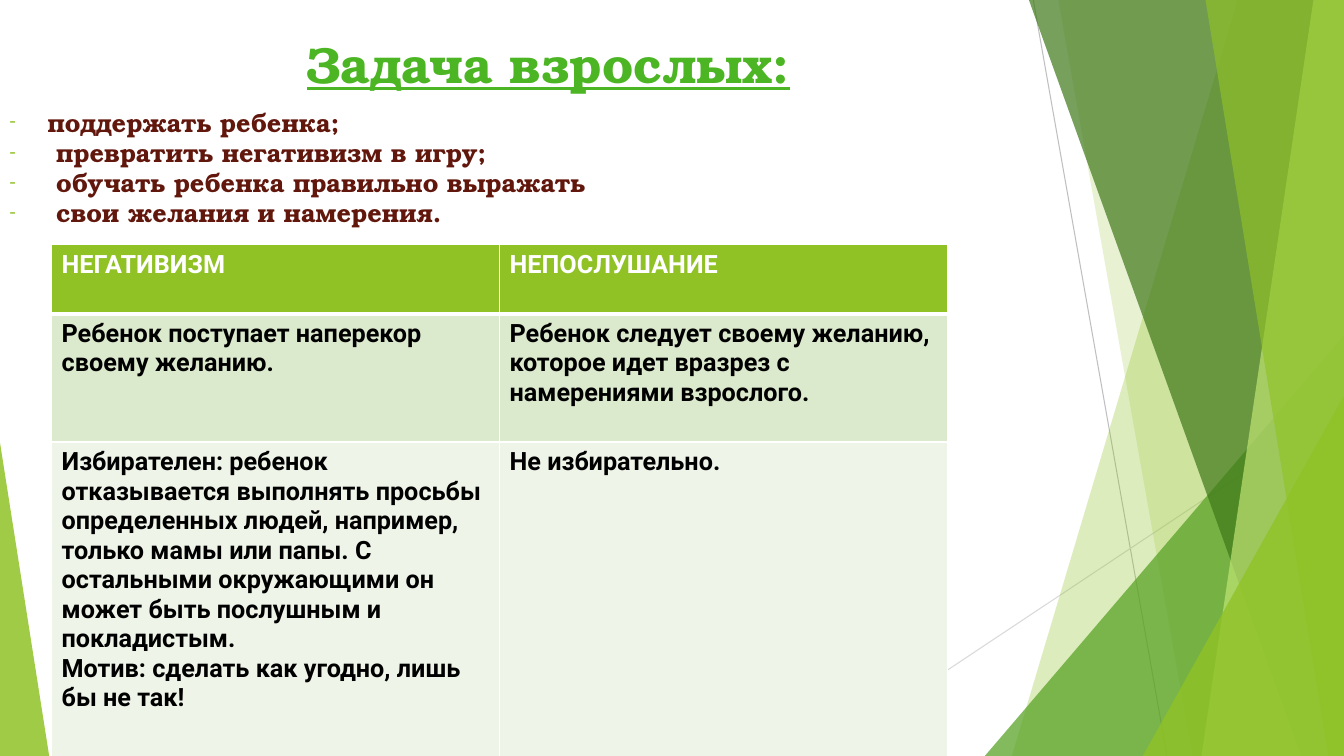
from lxml.etree import SubElement
from pptx import Presentation
from pptx.dml.color import RGBColor
from pptx.enum.shapes import MSO_CONNECTOR as Connector, MSO_SHAPE as Shape
from pptx.enum.text import MSO_ANCHOR as Anchor, PP_ALIGN as Align
from pptx.oxml.ns import qn
from pptx.util import Cm, Pt

# Content
TITLE = "Задача взрослых:"
TASKS = [
    "поддержать ребенка;",
    " превратить негативизм в игру;",
    " обучать ребенка правильно выражать",
    " свои желания и намерения.",
]
ROWS = [
    ("НЕГАТИВИЗМ", "НЕПОСЛУШАНИЕ"),
    ("Ребенок поступает наперекор своему желанию.",
     "Ребенок следует своему желанию, которое идет вразрез с намерениями взрослого."),
    ("Избирателен: ребенок отказывается выполнять просьбы определенных людей, "
     "например, только мамы или папы. С остальными окружающими он может быть "
     "послушным и покладистым.\nМотив: сделать как угодно, лишь бы не так!",
     "Не избирательно."),
]

# Style and sizes in centimetres
COLORS = {
    "lime": "90C226", "green": "54A021", "forest": "3F7819", "pale": "C0E474",
    "title": "4CB523", "task": "62170D", "white": "FFFFFF", "black": "000000",
    "band_1": "DBE9CD", "band_2": "EEF4E8", "line_1": "BFBFBF", "line_2": "D9D9D9",
}
SERIF, SANS = "TeX Gyre Bonum", "Roboto"
WIDTH, HEIGHT = 33.87, 19.05
ROW_HEIGHTS = [1.74, 3.23, 8.75]
ROW_STYLES = [("lime", "white"), ("band_1", "black"), ("band_2", "black")]
COLUMN_WIDTH = 11.29

# Thin lines: start x, start y, end x, end y, colour
LINES = [(26.04, 0, 29.41, HEIGHT, "line_1"), (WIDTH, 10.24, 20.62, HEIGHT, "line_2")]
# Ribbons reach the right edge: top x, bottom x
# Triangles stand on the bottom edge: left, top, width, apex
FACETS = [
    ("ribbon", (31.19, 25.5), "lime", 30),
    ("ribbon", (26.67, 30.05), "lime", 20),
    ("triangle", (24.82, 8.46, 9.05, 1), "green", 72),
    ("ribbon", (25.93, 32.79), "forest", 70),
    ("ribbon", (33.1, 30.28), "pale", 70),
    ("ribbon", (30.38, 33.48), "lime", 65),
    ("triangle", (28.8, 9.98, 5.07, 1), "lime", 80),
    ("triangle", (0, 11.15, 1.24, 0), "lime", 85),
]


def rgb(name):
    return RGBColor.from_string(COLORS[name])


def set_font(paragraph, face, size, color):
    font = paragraph.font
    font.name, font.size, font.bold = face, Pt(size), True
    font.color.rgb = rgb(color)


def add_ribbon(shapes, top_x, bottom_x):
    builder = shapes.build_freeform(Cm(top_x), 0)
    corners = [(WIDTH, 0), (WIDTH, HEIGHT), (bottom_x, HEIGHT)]
    builder.add_line_segments([(Cm(x), Cm(y)) for x, y in corners], close=True)
    return builder.convert_to_shape()


def add_triangle(shapes, left, top, width, apex):
    shape = shapes.add_shape(Shape.ISOSCELES_TRIANGLE, Cm(left), Cm(top),
                             Cm(width), Cm(HEIGHT - top))
    shape.adjustments[0] = apex
    return shape


def add_text(shapes, left, top, width, height, lines, size, color):
    frame = shapes.add_textbox(Cm(left), Cm(top), Cm(width), Cm(height)).text_frame
    frame.word_wrap = True
    frame.vertical_anchor = Anchor.TOP
    frame.text = "\n".join(lines)
    for paragraph in frame.paragraphs:
        set_font(paragraph, SERIF, size, color)
    return frame.paragraphs


def add_dash(paragraph):
    properties = paragraph._p.get_or_add_pPr()
    properties.set("marL", str(Cm(0.95)))
    properties.set("indent", str(-Cm(0.95)))
    color = SubElement(properties, qn("a:buClr"))
    SubElement(color, qn("a:srgbClr"), val=COLORS["lime"])
    SubElement(properties, qn("a:buSzPct"), val="80000")
    SubElement(properties, qn("a:buFont"), typeface=SANS)
    SubElement(properties, qn("a:buChar"), char="-")


def add_border(cell, side, points):
    line = SubElement(cell._tc.get_or_add_tcPr(), qn("a:ln" + side), w=str(Pt(points)))
    fill = SubElement(line, qn("a:solidFill"))
    SubElement(fill, qn("a:srgbClr"), val=COLORS["white"])


presentation = Presentation()
presentation.slide_width, presentation.slide_height = Cm(WIDTH), Cm(HEIGHT)
slide = presentation.slides.add_slide(presentation.slide_layouts[6])
shapes = slide.shapes

# Background lines and translucent facets
for x1, y1, x2, y2, color in LINES:
    line = shapes.add_connector(Connector.STRAIGHT, Cm(x1), Cm(y1), Cm(x2), Cm(y2))
    line.line.color.rgb = rgb(color)
    line.line.width = Pt(0.75)
    SubElement(line._element.spPr, qn("a:effectLst"))

makers = {"ribbon": add_ribbon, "triangle": add_triangle}
for kind, geometry, color, opacity in FACETS:
    shape = makers[kind](shapes, *geometry)
    shape.shadow.inherit = False
    shape.line.fill.background()
    shape.fill.solid()
    shape.fill.fore_color.rgb = rgb(color)
    fill_color = shape._element.spPr.find(qn("a:solidFill"))[0]
    SubElement(fill_color, qn("a:alpha"), val=str(opacity * 1000))

# Title and task list
heading = add_text(shapes, 1.88, 0.71, 23.88, 3.66, [TITLE], 36, "title")[0]
heading.alignment = Align.CENTER
heading.font.underline = True
for paragraph in add_text(shapes, 0, 2.57, 23.88, 3.61, TASKS, 18, "task"):
    add_dash(paragraph)

# Comparison table
table = shapes.add_table(len(ROWS), 2, Cm(1.3), Cm(6.17), Cm(2 * COLUMN_WIDTH),
                         Cm(sum(ROW_HEIGHTS))).table
for column in table.columns:
    column.width = Cm(COLUMN_WIDTH)
for index, (texts, (fill, ink)) in enumerate(zip(ROWS, ROW_STYLES)):
    table.rows[index].height = Cm(ROW_HEIGHTS[index])
    for cell, text in zip(table.rows[index].cells, texts):
        cell.text = text
        for paragraph in cell.text_frame.paragraphs:
            set_font(paragraph, SANS, 18, ink)
        for side in "LRTB":
            header_edge = (index, side) in [(0, "B"), (1, "T")]
            add_border(cell, side, 3 if header_edge else 1)
        cell.fill.solid()
        cell.fill.fore_color.rgb = rgb(fill)

presentation.save("out.pptx")
